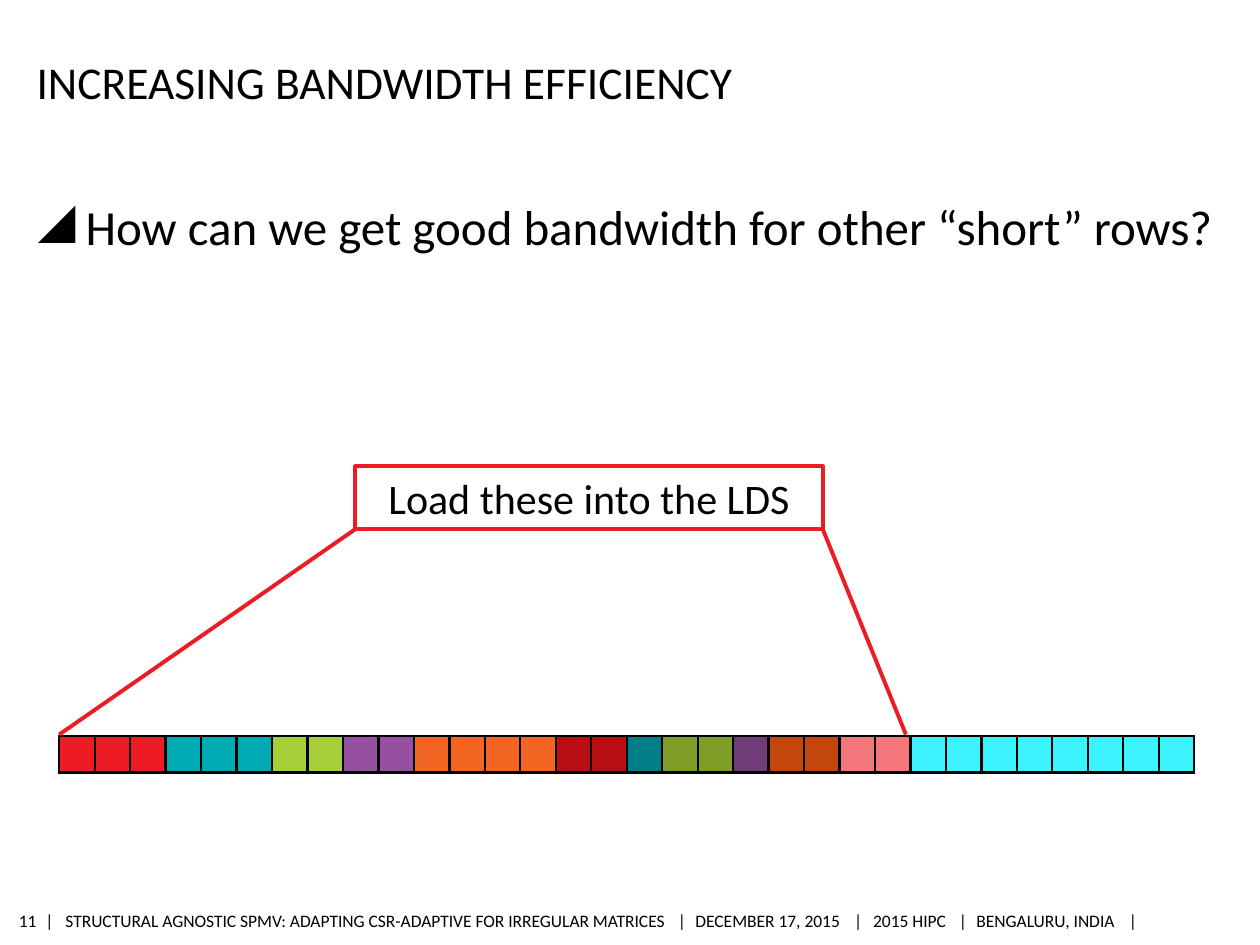
"""Build the slide on increasing bandwidth efficiency for short rows."""
from lxml.etree import SubElement
from pptx import Presentation
from pptx.dml.color import RGBColor
from pptx.enum.shapes import MSO_CONNECTOR, MSO_SHAPE
from pptx.enum.text import MSO_ANCHOR as ANCHOR, PP_ALIGN as ALIGN
from pptx.oxml.ns import qn
from pptx.util import Inches, Pt

BLACK = RGBColor(0x00, 0x00, 0x00)
RED = RGBColor(0xED, 0x1C, 0x24)
TEAL = RGBColor(0x00, 0xAA, 0xB5)
LIME = RGBColor(0xA6, 0xCE, 0x39)
PURPLE = RGBColor(0x96, 0x50, 0xA0)
ORANGE = RGBColor(0xF2, 0x65, 0x22)
DARK_RED = RGBColor(0xB8, 0x0F, 0x15)
DARK_TEAL = RGBColor(0x00, 0x7F, 0x88)
OLIVE = RGBColor(0x7E, 0x9E, 0x27)
DARK_PURPLE = RGBColor(0x70, 0x3C, 0x78)
RUST = RGBColor(0xC3, 0x47, 0x0C)
PINK = RGBColor(0xF4, 0x77, 0x7C)
CYAN = RGBColor(0x3A, 0xF3, 0xFF)

MATRIX_ROWS = [
    (RED, 3), (TEAL, 3), (LIME, 2), (PURPLE, 2), (ORANGE, 4), (DARK_RED, 2),
    (DARK_TEAL, 1), (OLIVE, 2), (DARK_PURPLE, 1), (RUST, 2), (PINK, 2), (CYAN, 8),
]
FOOTER = [
    "|", "STRUCTURAL AGNOSTIC SPMV: ADAPTING CSR-ADAPTIVE FOR IRREGULAR MATRICES",
    "|", "DECEMBER 17, 2015", "|", "2015 HIPC", "|", "BENGALURU, INDIA", "|",
]
FOOTER_TABS = [0.16, 5.02, 5.16, 6.42, 6.57, 7.25, 7.39, 8.6]


class SlideBuilder:
    """Hold the style and the current slide."""

    font = "Calibri"
    line_width = Pt(2.25)

    def __init__(self, prs):
        self.s = prs.slides.add_slide(prs.slide_layouts[6])

    def fill_text(self, sp, text, size, frame, align=ALIGN.LEFT, tabs=(), bullet=None):
        tf = sp.text_frame
        for name, value in frame.items():
            setattr(tf, name, value)
        p = tf.paragraphs[0]
        p.alignment = align
        pPr = p._p.get_or_add_pPr()
        if bullet:
            pPr.set("marL", str(Inches(0.38)))
            pPr.set("indent", str(-Inches(0.38)))
            SubElement(pPr, qn("a:buChar"), char=bullet)
        if tabs:
            tab_list = SubElement(pPr, qn("a:tabLst"))
            for tab in tabs:
                SubElement(tab_list, qn("a:tab"), pos=str(Inches(tab)), algn="l")
        r = p.add_run()
        r.text = text
        for name, value in {"name": self.font, "size": Pt(size)}.items():
            setattr(r.font, name, value)
        r.font.color.rgb = BLACK
        return p

    def text(self, box, text, size, top=0.0, bottom=0.0, anchor=ANCHOR.TOP,
             wrap=True, **style):
        sp = self.s.shapes.add_textbox(*map(Inches, box))
        frame = {
            "margin_left": 0, "margin_right": 0, "margin_top": Inches(top),
            "margin_bottom": Inches(bottom), "vertical_anchor": anchor,
            "word_wrap": wrap,
        }
        self.fill_text(sp, text, size, frame, **style)

    def callout(self, box, text, size):
        sp = self.s.shapes.add_shape(MSO_SHAPE.RECTANGLE, *map(Inches, box))
        sp.shadow.inherit = False
        sp.fill.background()
        sp.line.color.rgb = RED
        sp.line.width = self.line_width
        frame = {"word_wrap": True, "vertical_anchor": ANCHOR.TOP}
        p = self.fill_text(sp, text, size, frame, ALIGN.CENTER)
        p.space_after = Pt(6)

    def line(self, start, end):
        c = self.s.shapes.add_connector(
            MSO_CONNECTOR.STRAIGHT, *map(Inches, start + end))
        c.line.color.rgb = RED
        c.line.width = self.line_width
        SubElement(c._element.spPr, qn("a:effectLst"))

    def strip(self, box, colors):
        x, y, w, h = map(Inches, box)
        table = self.s.shapes.add_table(1, len(colors), x, y, w, h).table
        table.first_row = table.horz_banding = False
        for column, cell, color in zip(table.columns, table.iter_cells(), colors):
            column.width = round(w / len(colors))
            for side in ("left", "right", "top", "bottom"):
                setattr(cell, f"margin_{side}", 0)
            SubElement(cell.text_frame.paragraphs[0]._p, qn("a:endParaRPr"), sz="800")
            tcPr = cell._tc.get_or_add_tcPr()
            for tag in ("a:lnL", "a:lnR", "a:lnT", "a:lnB"):
                ln = SubElement(tcPr, qn(tag), w=str(Pt(1.5)))
                fill = SubElement(ln, qn("a:solidFill"))
                SubElement(fill, qn("a:srgbClr"), val=str(BLACK))
            cell.fill.solid()
            cell.fill.fore_color.rgb = color


def main():
    prs = Presentation()
    prs.slide_width, prs.slide_height = Inches(10), Inches(7.5)
    b = SlideBuilder(prs)
    footer = {"top": 0.04, "bottom": 0.04, "anchor": ANCHOR.MIDDLE}
    b.text((0.36, 7.18, 8.73, 0.26), "\t".join(FOOTER), 10, tabs=FOOTER_TABS, **footer)
    b.text((0.13, 7.18, 0.16, 0.26), "11", 10, wrap=False, align=ALIGN.RIGHT, **footer)
    b.strip((0.47, 5.84, 9.02, 0.29),
            [color for color, count in MATRIX_ROWS for _ in range(count)])
    b.text((0.29, 0.34, 8.4, 0.52), "INCREASING BANDWIDTH EFFICIENCY", 26,
           top=0.05, anchor=ANCHOR.BOTTOM)
    b.callout((2.82, 3.7, 3.71, 0.5), "Load these into the LDS", 24)
    b.line((6.53, 4.2), (7.19, 5.83))
    b.line((2.82, 4.2), (0.47, 5.83))
    b.text((0.3, 1.51, 9.4, 5.4),
           "How can we get good bandwidth for other “short” rows?", 28,
           top=0.05, bottom=0.05, bullet="◢")
    prs.save("out.pptx")


if __name__ == "__main__":
    main()
